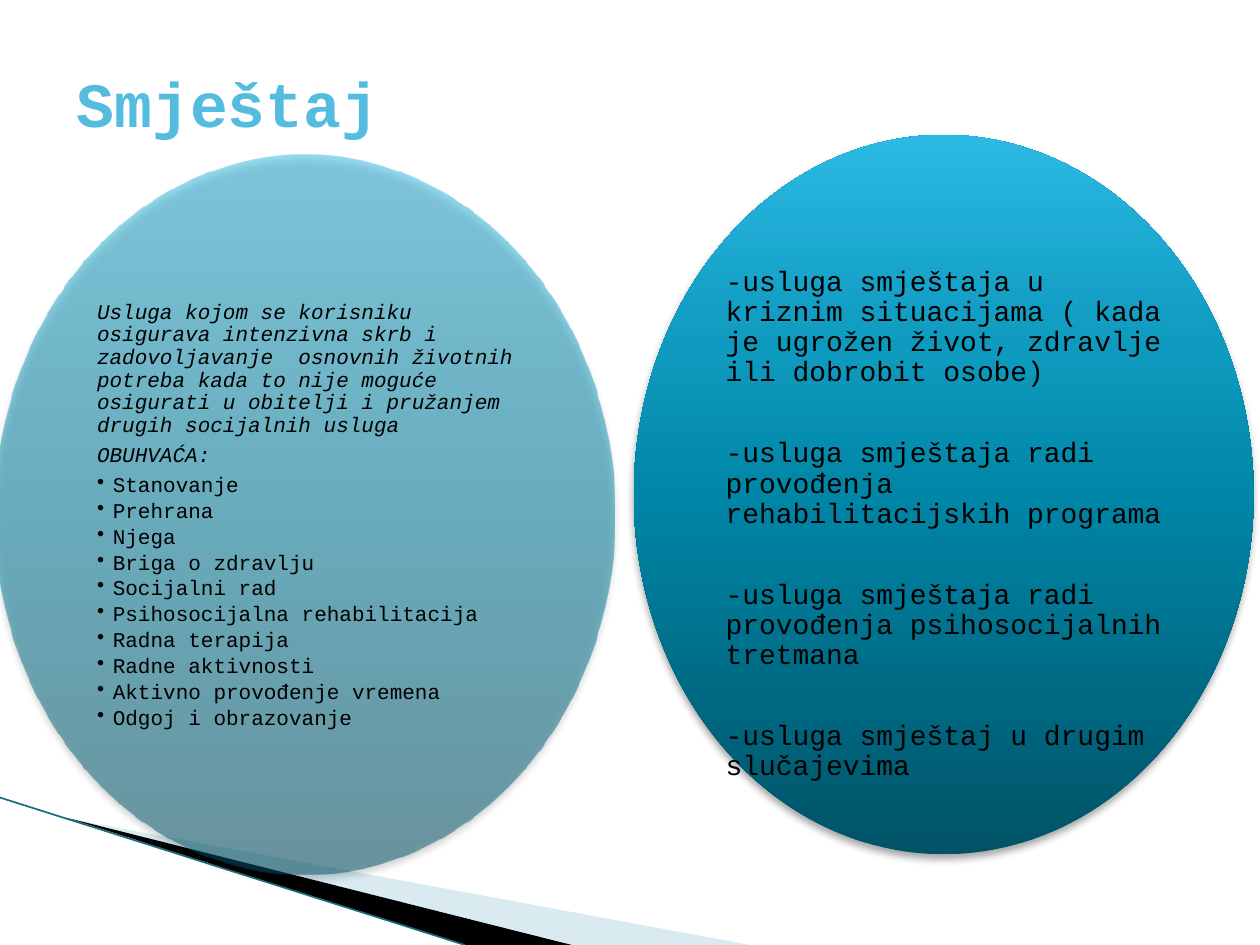
from pptx import Presentation, util as u
from pptx.dml.color import RGBColor
from pptx.enum import shapes, text
from pptx.oxml import parse_xml
from pptx.oxml.ns import nsdecls, qn

BLACK = RGBColor(0x00, 0x00, 0x00)
TITLE_BLUE = RGBColor(0x54, 0xBC, 0xDF)
PALE_BLUE = RGBColor(0xA0, 0xCB, 0xDC)
EDGE_TEAL = RGBColor(0x1B, 0x6B, 0x7E)
OVAL_STOPS = [
    (0, RGBColor(0x00, 0x53, 0x67)),
    (50, RGBColor(0x00, 0x86, 0xA7)),
    (70, RGBColor(0x0E, 0x9A, 0xBE)),
    (100, RGBColor(0x2C, 0xB9, 0xE3)),
]

INTRO = [
    "Usluga kojom se korisniku osigurava intenzivna skrb i zadovoljavanje  osnovnih "
    "životnih potreba kada to nije moguće osigurati u obitelji i pružanjem drugih "
    "socijalnih usluga",
    "OBUHVAĆA:",
]
SERVICES = [
    "Stanovanje", "Prehrana", "Njega", "Briga o zdravlju", "Socijalni rad",
    "Psihosocijalna rehabilitacija", "Radna terapija", "Radne aktivnosti",
    "Aktivno provođenje vremena", "Odgoj i obrazovanje",
]
CASES = [
    "-usluga smještaja u kriznim situacijama ( kada je ugrožen život, zdravlje ili dobrobit osobe)",
    "-usluga smještaja radi provođenja rehabilitacijskih programa",
    "-usluga smještaja radi provođenja psihosocijalnih tretmana",
    "-usluga smještaj u drugim slučajevima",
]

deck = Presentation()
deck.slide_width, deck.slide_height = u.Inches(10), u.Inches(7.5)
page = deck.slides.add_slide(deck.slide_layouts[6])
column = deck.slide_width // 100
row = deck.slide_height // 75


def place(left, top, width, height):
    return int(left * column), int(top * row), int(width * column), int(height * row)


def write(frame, wording, size, color=BLACK, bold=False, italic=False,
          spacing=0.9, after=0, bullet=False):
    para = frame.paragraphs[0]
    if para.runs:
        para = frame.add_paragraph()
    if bullet:
        props = para._p.get_or_add_pPr()
        props.set("marL", str(int(1.25 * column)))
        props.set("indent", str(int(-1.25 * column)))
        props.append(parse_xml(f'<a:buChar {nsdecls("a")} char="•"/>'))
    para.line_spacing = spacing
    para.space_after = u.Pt(after)
    span = para.add_run()
    span.text = wording
    span.font.name = "Courier New"
    span.font.size = u.Pt(size)
    span.font.color.rgb = color
    span.font.bold = bold
    span.font.italic = italic


wedges = [
    ([(5.5, 65), (59.5, 75), (45.6, 75)], PALE_BLUE, 40),
    ([(5.3, 64.9), (45.4, 75), (36.9, 75)], BLACK, 100),
]
for corners, color, opacity in wedges:
    points = [(int(x * column), int(y * row)) for x, y in corners]
    outline = page.shapes.build_freeform(*points[0])
    outline.add_line_segments(points[1:], close=True)
    wedge = outline.convert_to_shape()
    wedge.shadow.inherit = False
    wedge.fill.solid()
    wedge.fill.fore_color.rgb = color
    wedge.line.fill.background()
    tint = wedge._element.spPr.find(qn("a:solidFill"))[0]
    tint.append(parse_xml(f'<a:alpha {nsdecls("a")} val="{opacity * 1000}"/>'))

edge = page.shapes.add_connector(
    shapes.MSO_CONNECTOR.STRAIGHT, 0, int(63.3 * row), int(36.9 * column), deck.slide_height)
edge.line.color.rgb = EDGE_TEAL
edge.line.width = u.Pt(0.95)
edge._element.spPr.append(parse_xml(f'<a:effectLst {nsdecls("a")}/>'))

for left, top, opacity in [(-0.4, 12.3, 50), (50.3, 10.7, 100)]:
    oval = page.shapes.add_shape(shapes.MSO_SHAPE.OVAL, *place(left, top, 49.2, 57.1))
    oval.shadow.inherit = False
    oval.line.fill.background()
    stops = "".join(
        f'<a:gs pos="{share * 1000}"><a:srgbClr val="{color}">'
        f'<a:alpha val="{opacity * 1000}"/></a:srgbClr></a:gs>'
        for share, color in OVAL_STOPS)
    oval._element.spPr.find(qn("a:prstGeom")).addnext(parse_xml(
        f'<a:gradFill {nsdecls("a")} rotWithShape="1"><a:gsLst>{stops}</a:gsLst>'
        '<a:lin ang="16200000" scaled="0"/></a:gradFill>'))
    oval._element.spPr.find(qn("a:effectLst")).append(parse_xml(
        f'<a:outerShdw {nsdecls("a")} blurRad="{u.Pt(4)}" dist="{u.Pt(3)}" dir="5400000" '
        'rotWithShape="0"><a:srgbClr val="000000"><a:alpha val="35000"/></a:srgbClr></a:outerShdw>'))

frames = []
for area, anchor, margin in [
    ((5.1, 3.6, 87.5, 9.1), text.MSO_ANCHOR.MIDDLE, 1),
    ((6.8 + 0.9, 20.7, 34.8, 40.4), text.MSO_ANCHOR.MIDDLE, 0),
    ((57.6, 21.2, 34.8, 40.4), text.MSO_ANCHOR.TOP, 0),
]:
    frame = page.shapes.add_textbox(*place(*area)).text_frame
    frame.word_wrap = True
    frame.vertical_anchor = anchor
    frame.margin_left = frame.margin_right = margin * column
    frame.margin_top = frame.margin_bottom = margin * row // 2
    frames.append(frame)
title, meaning, kinds = frames

write(title, "Smještaj", 36, color=TITLE_BLUE, bold=True, spacing=1.0)
for wording in INTRO:
    write(meaning, wording, 12, italic=True, after=4.2)
for wording in SERVICES:
    write(meaning, wording, 12, after=1.8, bullet=True)
for wording in CASES:
    write(kinds, wording, 16, after=29)

deck.save("out.pptx")
